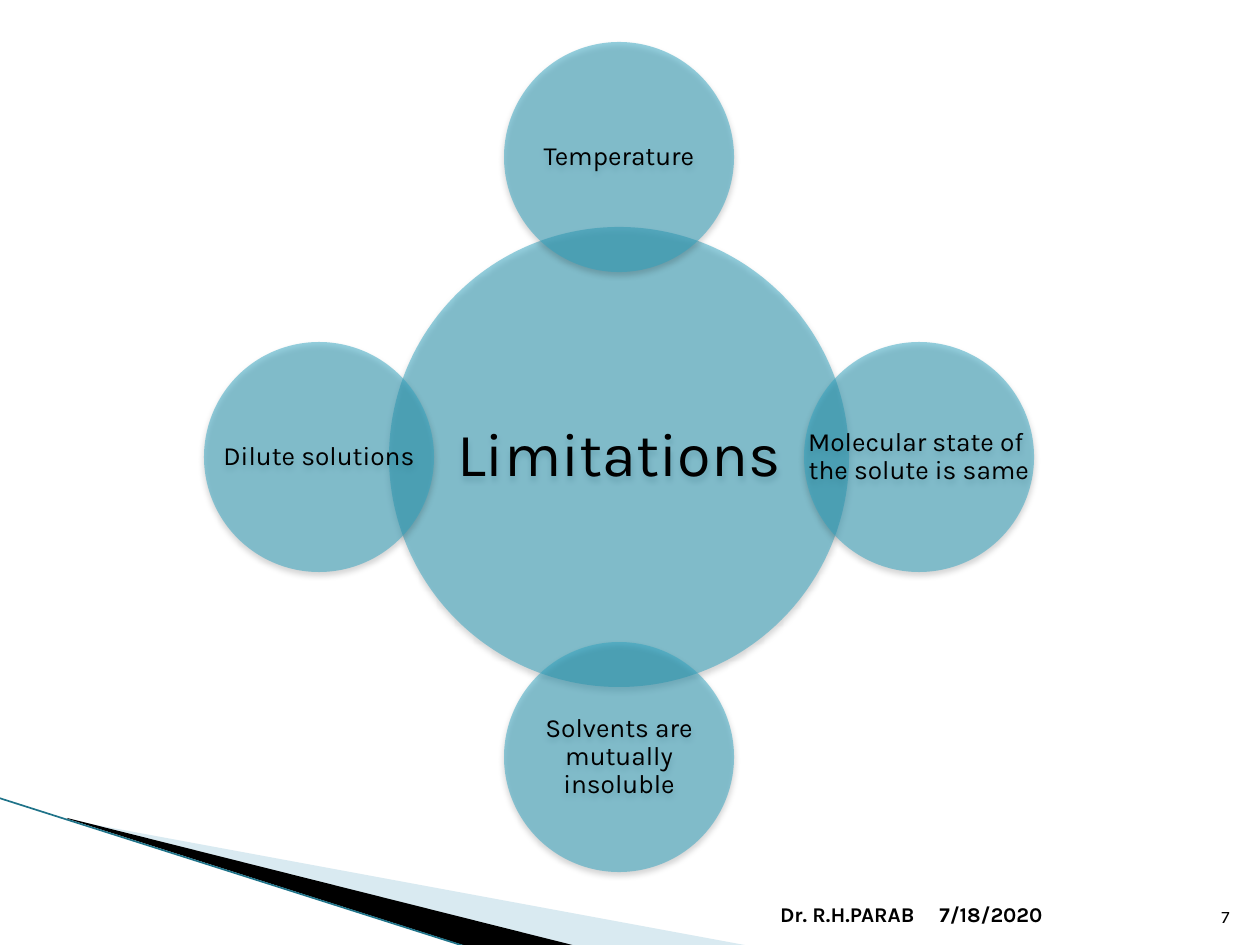
from lxml.etree import SubElement
from pptx import Presentation
from pptx.dml.color import RGBColor
from pptx.enum.shapes import MSO_CONNECTOR, MSO_SHAPE
from pptx.enum.text import MSO_ANCHOR, PP_ALIGN
from pptx.oxml.ns import qn
from pptx.util import Emu, Pt

PX = 914400 / 126
FONT = "Karla"
BLACK, CIRCLE_BLUE, PALE_BLUE, LINE_BLUE = "000000", "2DA2BF", "A0CBDC", "1F7389"

# Content: label, direction from the centre, whether the label wraps
HUB = "Limitations"
LIMITATIONS = [
    ("Temperature", (0, -1), False),
    ("Molecular state of \vthe solute is same", (1, 0), False),
    ("Solvents are mutually insoluble", (0, 1), True),
    ("Dilute solutions", (-1, 0), False),
]
# Text, left, width, size, bold, alignment
FOOTER = [
    ("7/18/2020", 927, 265, 12, True, PP_ALIGN.LEFT),
    ("7", 1192, 50, 10, False, PP_ALIGN.RIGHT),
    ("Dr. R.H.PARAB", 603, 324, 12, True, PP_ALIGN.RIGHT),
]
# Points, colour, opacity in percent
WEDGES = [
    ([(69, 820), (750, 946), (575, 946), (69, 819)], PALE_BLUE, 40),
    ([(67, 818), (576, 946), (469, 947), (68, 819)], BLACK, 100),
]
CENTRE_X, CENTRE_Y = 619, 457
HUB_SIZE, SATELLITE_SIZE, ORBIT = 460, 230, 300


def px(value):
    return Emu(round(value * PX))


def rgb(colour):
    return RGBColor.from_string(colour)


def set_fill(shape, colour, opacity):
    shape.shadow.inherit = False
    shape.fill.solid()
    shape.fill.fore_color.rgb = rgb(colour)
    shape.line.fill.background()
    if opacity < 100:
        colour_element = shape.fill._xPr.find(qn("a:solidFill"))[0]
        SubElement(colour_element, qn("a:alpha"), val=str(opacity * 1000))


def add_soft_shadow(shape):
    effects = shape._element.spPr.find(qn("a:effectLst"))
    shadow = SubElement(effects, qn("a:outerShdw"), blurRad=str(Pt(3.5)),
                        dist=str(Pt(2.2)), dir="5400000", rotWithShape="0")
    colour = SubElement(shadow, qn("a:srgbClr"), val=BLACK)
    SubElement(colour, qn("a:alpha"), val="32000")


def set_text(shape, text, size, alignment, anchor, bold=False, wrap=True):
    frame = shape.text_frame
    frame.word_wrap = wrap
    frame.vertical_anchor = anchor
    paragraph = frame.paragraphs[0]
    paragraph.text = text
    paragraph.alignment = alignment
    paragraph.font.name = FONT
    paragraph.font.size = Pt(size)
    paragraph.font.bold = bold
    paragraph.font.color.rgb = rgb(BLACK)
    return frame


def add_circle(slide, centre_x, centre_y, diameter, text, size, inset, wrap):
    circle = slide.shapes.add_shape(
        MSO_SHAPE.OVAL, px(centre_x - diameter / 2), px(centre_y - diameter / 2),
        px(diameter), px(diameter))
    set_fill(circle, CIRCLE_BLUE, 50)
    add_soft_shadow(circle)
    frame = set_text(circle, text, size, PP_ALIGN.CENTER, MSO_ANCHOR.MIDDLE, wrap=wrap)
    frame.margin_left = frame.margin_right = px(inset)
    frame.margin_top = frame.margin_bottom = px(inset)
    frame.paragraphs[0].line_spacing = 0.9


def main():
    presentation = Presentation()
    presentation.slide_width, presentation.slide_height = px(1260), px(945)
    slide = presentation.slides.add_slide(presentation.slide_layouts[6])

    # Corner decoration
    for points, colour, opacity in WEDGES:
        builder = slide.shapes.build_freeform(*points[0], scale=PX)
        builder.add_line_segments(points[1:], close=True)
        set_fill(builder.convert_to_shape(), colour, opacity)
    edge = slide.shapes.add_connector(
        MSO_CONNECTOR.STRAIGHT, px(-1), px(798), px(467), px(947))
    edge.line.color.rgb = rgb(LINE_BLUE)
    edge.line.width = Pt(0.95)
    SubElement(edge._element.spPr, qn("a:effectLst"))

    # Hub and the circles around it
    add_circle(slide, CENTRE_X, CENTRE_Y, HUB_SIZE, HUB, 35, 6, False)
    for text, (step_x, step_y), wrap in LIMITATIONS:
        add_circle(slide, CENTRE_X + step_x * ORBIT, CENTRE_Y + step_y * ORBIT,
                   SATELLITE_SIZE, text, 15, 2, wrap)

    # Footer
    for text, left, width, size, bold, alignment in FOOTER:
        box = slide.shapes.add_textbox(px(left), px(883), px(width), px(50))
        set_text(box, text, size, alignment, MSO_ANCHOR.BOTTOM, bold)

    presentation.save("out.pptx")


if __name__ == "__main__":
    main()
